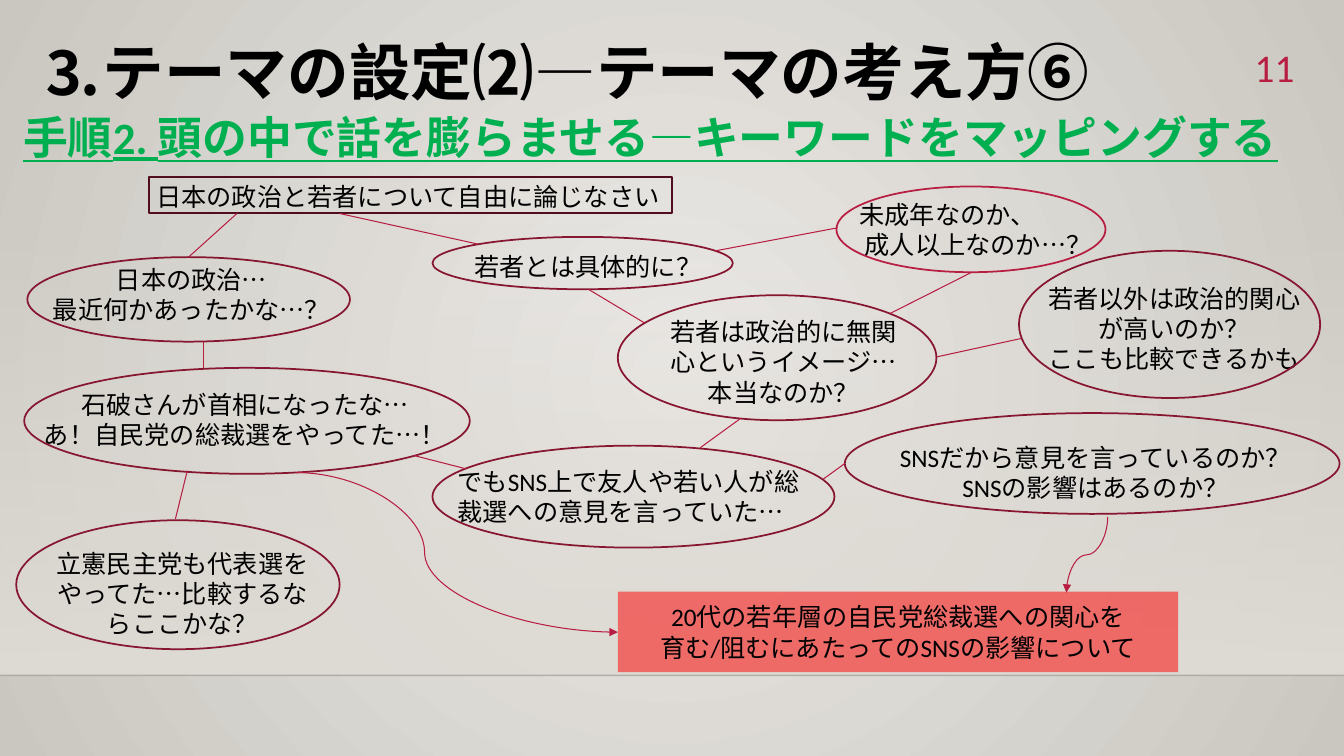
from pptx import Presentation
from pptx.dml.color import RGBColor
from pptx.enum.shapes import MSO_CONNECTOR, MSO_SHAPE
from pptx.enum.text import MSO_ANCHOR as ANCHOR, PP_ALIGN as ALIGN
from pptx.oxml import parse_xml
from pptx.oxml.ns import nsdecls, qn
from pptx.util import Cm, Pt

FONT = "Calibri"
COLORS = {
    "black": "000000", "green": "00B050", "red": "FF0000",
    "crimson": "B71E42", "wine": "871631", "maroon": "500D1D",
    "center": "ECEAE7", "edge": "CAC7C1", "floor": "DFDBD5", "rule": "000001",
}
LEFT, CENTER = ALIGN.LEFT, ALIGN.CENTER

BUBBLES = [
    ([("若者とは具体的に？", LEFT)],
     (11.71, 6.22, 6.63, 1.02), (10.9, 5.97, 7.57, 1.32), "wine"),
    ([("日本の政治…", CENTER), ("最近何かあったかな…？", CENTER)],
     (0.81, 6.53, 8.03, 1.8), (0.69, 6.48, 8.13, 2.13), "wine"),
    ([("未成年なのか、", LEFT), ("成人以上なのか…？", CENTER)],
     (21.41, 4.9, 6.48, 1.8), (21.08, 4.7, 6.78, 2.16), "crimson"),
    ([("若者は政治的に無関心というイメージ…本当なのか？", CENTER)],
     (16.43, 7.85, 6.63, 2.57), (15.57, 7.44, 8.03, 3.15), "wine"),
    ([("石破さんが首相になったな…", CENTER), ("あ！自民党の総裁選をやってた…！", CENTER)],
     (0.33, 9.68, 11.68, 1.8), (0.61, 9.27, 11.23, 2.67), "wine"),
    ([("SNSだから意見を言っているのか？", CENTER), ("SNSの影響はあるのか？", CENTER)],
     (21.84, 11.02, 11.53, 2.57), (21.29, 10.41, 12.47, 2.54), "wine"),
    ([("でもSNS上で友人や若い人が総裁選への意見を言っていた…", LEFT)],
     (11.28, 11.63, 9.73, 2.57), (10.9, 11.23, 10.13, 2.57), "wine"),
    ([("立憲民主党も代表選をやってた…比較するならここかな？", CENTER)],
     (1.12, 13.69, 6.96, 2.57), (0.41, 13.11, 8.15, 3.25), "wine"),
    ([("若者以外は政治的関心が高いのか？", CENTER), ("ここも比較できるかも", CENTER)],
     (26.14, 7.01, 6.91, 2.34), (25.68, 6.32, 7.59, 3.71), "wine"),
]

LINKS = [
    (12.04, 6.15, 8.56, 5.38), (5.97, 5.38, 4.75, 6.48),
    (22.43, 7.9, 24.49, 6.86), (21.11, 5.74, 18.03, 6.32),
    (4.72, 11.86, 4.42, 13.08), (10.44, 11.48, 11.73, 11.81),
    (21.29, 11.68, 20.75, 12.07), (14.83, 7.29, 16.23, 8.13),
    (18.67, 10.54, 17.65, 11.28), (5.13, 8.61, 5.13, 9.27),
    (23.62, 8.99, 25.73, 8.53),
]


def rgb(name):
    return RGBColor.from_string(COLORS[name])


def lengths(values):
    return [Cm(value) for value in values]


def fade(shape, percent):
    color = next(shape.element.iter(qn("a:srgbClr")))
    color.append(parse_xml(f'<a:alpha {nsdecls("a")} val="{percent * 1000}"/>'))


def set_gradient(fill, names):
    fill.gradient()
    for stop, name in zip(fill.gradient_stops, names):
        stop.color.rgb = rgb(name)


def style_run(run, size, color, bold=False, underline=False):
    run.font.name = FONT
    run.font.size = Pt(size)
    run.font.color.rgb = rgb(color)
    run.font.bold = bold
    run.font.underline = underline


def write(text_frame, lines, size=18, color="black"):
    text_frame.text = "\n".join(text for text, _ in lines)
    for paragraph, (_, align) in zip(text_frame.paragraphs, lines):
        paragraph.alignment = align
        for run in paragraph.runs:
            style_run(run, size, color)


def add_label(slide, lines, box, wrap=True, **style):
    text_frame = slide.shapes.add_textbox(*lengths(box)).text_frame
    text_frame.word_wrap = wrap
    write(text_frame, lines, **style)


def add_outline(slide, kind, box, color):
    shape = slide.shapes.add_shape(kind, *lengths(box))
    shape.shadow.inherit = False
    shape.fill.background()
    shape.line.color.rgb = rgb(color)
    shape.line.width = Pt(1.25)


def add_link(slide, ends, kind=MSO_CONNECTOR.STRAIGHT, color="crimson", width=0.75):
    connector = slide.shapes.add_connector(kind, *lengths(ends))
    connector.line.color.rgb = rgb(color)
    connector.line.width = Pt(width)
    connector.element.spPr.append(parse_xml(f'<a:effectLst {nsdecls("a")}/>'))
    return connector


def add_curved_arrow(slide, ends, bend=50000, rotation=0):
    connector = add_link(slide, ends, MSO_CONNECTOR.CURVE)
    properties = connector.element.spPr
    properties.find(qn("a:xfrm")).set("rot", str(rotation * 60000))
    properties.find(qn("a:ln")).append(
        parse_xml(f'<a:tailEnd {nsdecls("a")} type="triangle"/>'))
    next(properties.iter(qn("a:avLst"))).append(
        parse_xml(f'<a:gd {nsdecls("a")} name="adj1" fmla="val {bend}"/>'))


def add_backdrop(slide):
    set_gradient(slide.background.fill, ("center", "edge"))
    linear = next(slide.element.iter(qn("a:lin")))
    linear.getparent().replace(linear, parse_xml(
        f'<a:path {nsdecls("a")} path="circle">'
        '<a:fillToRect l="50000" t="50000" r="50000" b="50000"/></a:path>'))
    floor = slide.shapes.add_shape(MSO_SHAPE.RECTANGLE, *lengths((0, 5.61, 33.87, 11.41)))
    floor.shadow.inherit = False
    floor.line.fill.background()
    set_gradient(floor.fill, ("floor", "floor"))
    floor.fill.gradient_angle = 270
    fade(floor, 0)
    fade(add_link(slide, (0, 17.02, 33.87, 17.02), color="rule", width=1), 20)


def add_headings(slide):
    title = slide.shapes.title
    title.left, title.top, title.width, title.height = lengths((0.33, 2.79, 33.02, 1.93))
    title.text_frame.text = "手順2. 頭の中で話を膨らませる—キーワードをマッピングする"
    title.text_frame.vertical_anchor = ANCHOR.TOP
    paragraph = title.text_frame.paragraphs[0]
    paragraph.alignment = LEFT
    paragraph.line_spacing = 0.9
    style_run(paragraph.runs[0], 32, "green", bold=True, underline=True)

    heading = slide.shapes.add_textbox(*lengths((0.79, 0.94, 27.1, 3.18))).text_frame
    heading.word_wrap = True
    paragraph = heading.paragraphs[0]
    paragraph.line_spacing = 0.9
    for text, bold in (("⒊テーマの設定⑵", True), ("—", False), ("テーマの考え方⑥", True)):
        run = paragraph.add_run()
        run.text = text
        style_run(run, 44, "black", bold=bold)

    add_label(slide, [("11", ALIGN.RIGHT)], (30.61, 0.97, 2.26, 1.4), size=28, color="crimson")


def add_conclusion(slide):
    shape = slide.shapes.add_shape(MSO_SHAPE.RECTANGLE, *lengths((15.57, 14.91, 14.12, 2.03)))
    shape.shadow.inherit = False
    shape.fill.solid()
    shape.fill.fore_color.rgb = rgb("red")
    fade(shape, 51)
    shape.line.fill.background()
    shape.text_frame.vertical_anchor = ANCHOR.MIDDLE
    write(shape.text_frame, [("20代の若年層の自民党総裁選への関心を", CENTER),
                             ("育む/阻むにあたってのSNSの影響について", CENTER)])


def main():
    presentation = Presentation()
    presentation.slide_width, presentation.slide_height = Cm(33.87), Cm(19.05)
    slide = presentation.slides.add_slide(presentation.slide_layouts[5])
    add_backdrop(slide)
    add_headings(slide)
    add_label(slide, [("日本の政治と若者について自由に論じなさい", CENTER)],
              (3.61, 4.45, 13.34, 1.02), wrap=False)
    add_outline(slide, MSO_SHAPE.RECTANGLE, (3.76, 4.47, 13.18, 0.89), "maroon")
    for lines, text_box, ellipse_box, color in BUBBLES:
        add_label(slide, lines, text_box)
        add_outline(slide, MSO_SHAPE.OVAL, ellipse_box, color)
    for ends in LINKS:
        add_link(slide, ends)
    add_conclusion(slide)
    add_curved_arrow(slide, (7.47, 11.91, 15.57, 15.93), bend=39900)
    add_curved_arrow(slide, (26.44, 13.46, 28.35, 14.5), rotation=90)
    presentation.save("out.pptx")


if __name__ == "__main__":
    main()
